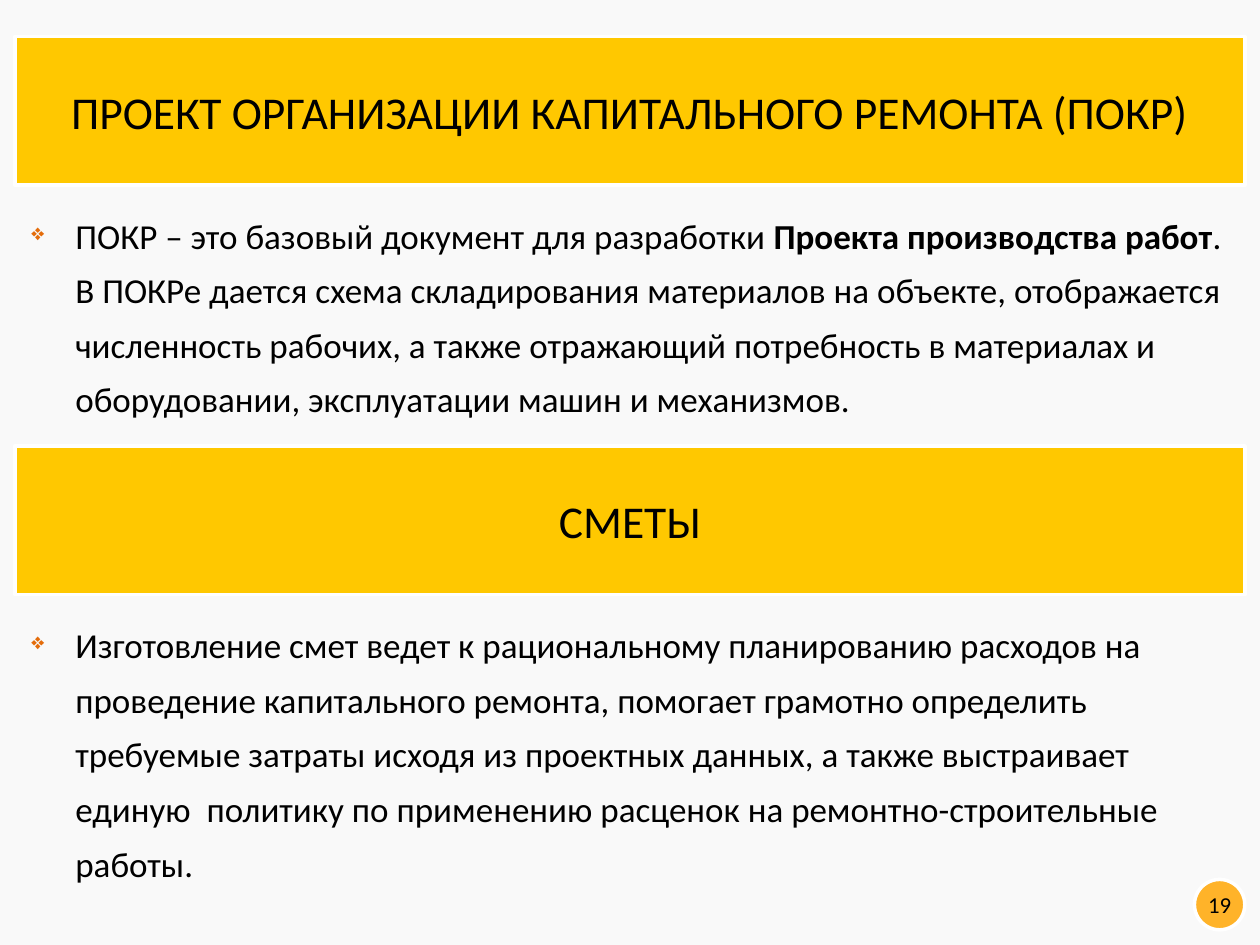
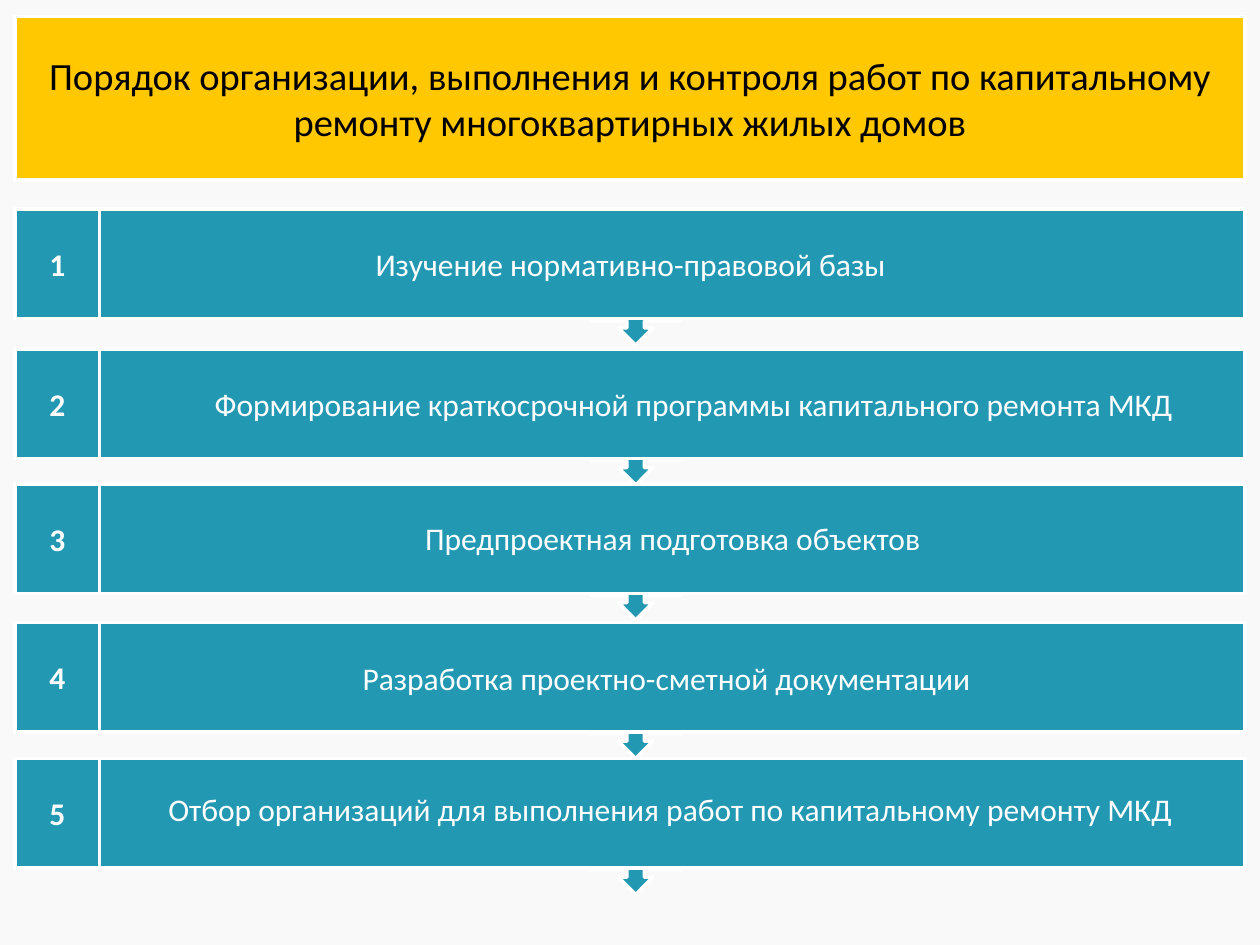
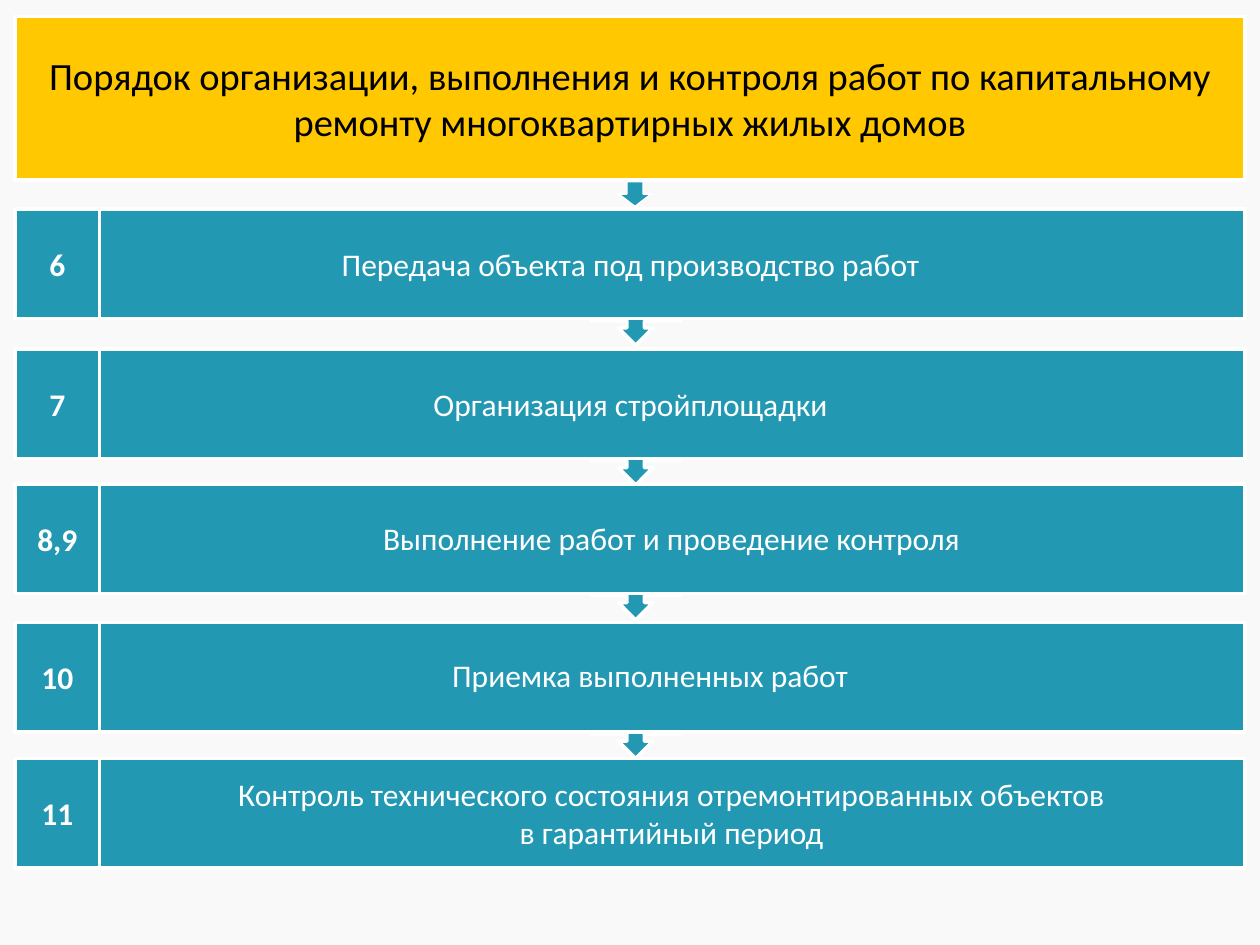
from lxml.etree import SubElement
from pptx import Presentation
from pptx.dml.color import RGBColor
from pptx.enum.shapes import MSO_SHAPE as Shape
from pptx.enum.text import MSO_ANCHOR as Anchor, PP_ALIGN as Align
from pptx.oxml.ns import qn
from pptx.util import Inches, Pt

# Shared look
BACKGROUND = RGBColor(0xF9, 0xF9, 0xF9)
YELLOW = RGBColor(0xFF, 0xC8, 0x00)
AMBER = RGBColor(0xFF, 0xB3, 0x29)
TEAL = RGBColor(0x23, 0x98, 0xB3)
WHITE = RGBColor(0xFF, 0xFF, 0xFF)
BLACK = RGBColor(0x00, 0x00, 0x00)
BULLET_COLOR = "E46C0A"

SECTION_FONT = {"size": Pt(26), "color": BLACK}
TITLE_FONT = {"size": Pt(22), "color": BLACK}
BODY_FONT = {"size": Pt(20), "color": BLACK}
STEP_FONT = {"size": Pt(18), "color": WHITE}
NUMBER_FONT = {**STEP_FONT, "bold": True}
BADGE_FONT = {"size": Pt(13), "color": BLACK}

LEFT, WIDTH = 0.12, 9.76
ROW_TOPS = (1.66, 2.77, 3.84, 4.94, 6.02)
ROW_HEIGHT = 0.87

# Content
SECTIONS = [
    (0.29, "ПРОЕКТ ОРГАНИЗАЦИИ КАПИТАЛЬНОГО РЕМОНТА (ПОКР)", [
        ("ПОКР – это базовый документ для разработки ", False),
        ("Проекта производства работ", True),
        (". В ПОКРе дается схема складирования материалов на объекте, "
         "отображается численность рабочих, а также отражающий потребность "
         "в материалах и оборудовании, эксплуатации машин и механизмов.", False),
    ]),
    (3.54, "СМЕТЫ", [
        ("Изготовление смет ведет к рациональному планированию расходов на "
         "проведение капитального ремонта, помогает грамотно определить "
         "требуемые затраты исходя из проектных данных, а также выстраивает "
         "единую  политику по применению расценок на ремонтно-строительные "
         "работы.", False),
    ]),
]
PROCESS_TITLE = ("Порядок организации, выполнения и контроля работ по "
                 "капитальному ремонту многоквартирных жилых домов")

# Steps: number, lines, then the left indent of a text set inside the bar
# or the (left, top, width, height) of a separate label
FIRST_STEPS = [
    ("1", ["Изучение нормативно-правовой базы"], 0),
    ("2", ["Формирование краткосрочной программы капитального ремонта МКД"], 1),
    ("3", ["Предпроектная подготовка объектов"], (0.89, 4.07, 8.9, 0.4)),
    ("4", ["Разработка проектно-сметной документации"], (0.79, 5.18, 9, 0.4)),
    ("5", ["Отбор организаций для выполнения работ по капитальному ремонту МКД"],
     (0.77, 6.22, 9.1, 0.4)),
]
LAST_STEPS = [
    ("6", ["Передача объекта под производство работ"], 0),
    ("7", ["Организация стройплощадки"], 0),
    ("8,9", ["Выполнение работ и проведение контроля"], (0.78, 4.07, 9.1, 0.4)),
    ("10", ["Приемка выполненных работ"], (0.61, 5.16, 9.1, 0.4)),
    ("11", ["Контроль технического состояния отремонтированных объектов",
            "в гарантийный период"], (0.78, 6.1, 9.1, 0.71)),
]


def add_run(paragraph, text, style):
    run = paragraph.add_run()
    run.text = text
    run.font.name = "Calibri"
    for name, value in style.items():
        if name == "color":
            run.font.color.rgb = value
        else:
            setattr(run.font, name, value)


def write_lines(frame, lines, style):
    """Write one centred paragraph for each line."""
    frame.word_wrap = True
    for index, line in enumerate(lines):
        paragraph = frame.add_paragraph() if index else frame.paragraphs[0]
        paragraph.alignment = Align.CENTER
        add_run(paragraph, line, style)


def add_block(shapes, kind, box, fill, lines=(), style=None, line_width=2):
    shape = shapes.add_shape(kind, *map(Inches, box))
    shape.shadow.inherit = False
    shape.fill.solid()
    shape.fill.fore_color.rgb = fill
    shape.line.color.rgb = WHITE
    shape.line.width = Pt(line_width)
    shape.text_frame.vertical_anchor = Anchor.MIDDLE
    if lines:
        write_lines(shape.text_frame, lines, style)
    return shape


def add_label(slide, box, lines, style):
    label = slide.shapes.add_textbox(*map(Inches, box))
    write_lines(label.text_frame, lines, style)


def add_bullet(paragraph):
    properties = paragraph._p.get_or_add_pPr()
    properties.set("marL", str(Inches(0.38)))
    properties.set("indent", str(Inches(-0.35)))
    color = SubElement(properties, qn("a:buClr"))
    SubElement(color, qn("a:srgbClr")).set("val", BULLET_COLOR)
    SubElement(properties, qn("a:buSzPct")).set("val", "65000")
    SubElement(properties, qn("a:buChar")).set("char", "❖")


def add_section(slide, top, heading, parts):
    """Add a yellow heading band with a bulleted text under it."""
    add_block(slide.shapes, Shape.RECTANGLE, (LEFT, top, WIDTH, 1.18),
              YELLOW, [heading], SECTION_FONT)
    body = slide.shapes.add_textbox(
        *map(Inches, (LEFT, top + 1.26, WIDTH, 3.75)))
    body.text_frame.word_wrap = True
    paragraph = body.text_frame.paragraphs[0]
    for name, value in {"line_spacing": 1.3, "space_before": Pt(8)}.items():
        setattr(paragraph, name, value)
    add_bullet(paragraph)
    for text, bold in parts:
        add_run(paragraph, text, {**BODY_FONT, "bold": bold})


def add_page_badge(slide, number):
    badge = add_block(slide.shapes, Shape.OVAL, (9.48, 6.98, 0.4, 0.4),
                      AMBER, [number], BADGE_FONT)
    for side in ("left", "top", "right", "bottom"):
        setattr(badge.text_frame, f"margin_{side}", 0)


def add_step(slide, top, number, lines, placement, has_arrow):
    """Add a grouped step row: arrow below, bar and number cell."""
    row = slide.shapes.add_group_shape().shapes
    if has_arrow:
        add_block(row, Shape.DOWN_ARROW_CALLOUT,
                  (4.69, top + 0.53, 0.71, 0.55), TEAL)
    bar = add_block(row, Shape.RECTANGLE, (0.13, top, 9.75, ROW_HEIGHT), TEAL)
    add_block(row, Shape.RECTANGLE, (LEFT, top, 0.67, ROW_HEIGHT),
              TEAL, [number], NUMBER_FONT)
    if isinstance(placement, tuple):
        add_label(slide, placement, lines, STEP_FONT)
    else:
        write_lines(bar.text_frame, lines, STEP_FONT)
        bar.text_frame.margin_left = Inches(0.1 + placement)


def add_process(slide, steps, continues):
    """Add the title band and step rows; continues adds the last arrow."""
    add_block(slide.shapes, Shape.RECTANGLE, (LEFT, 0.13, WIDTH, 1.3),
              YELLOW, [PROCESS_TITLE], TITLE_FONT)
    for top, step in zip(ROW_TOPS, steps):
        add_step(slide, top, *step, continues or step is not steps[-1])


def add_slide(presentation):
    slide = presentation.slides.add_slide(presentation.slide_layouts[6])
    slide.background.fill.solid()
    slide.background.fill.fore_color.rgb = BACKGROUND
    return slide


def main():
    presentation = Presentation()
    presentation.slide_width = Inches(10)
    presentation.slide_height = Inches(7.5)

    # Project documents
    slide = add_slide(presentation)
    for section in SECTIONS:
        add_section(slide, *section)
    add_page_badge(slide, "19")

    # Steps 1 to 5
    add_process(add_slide(presentation), FIRST_STEPS, continues=True)

    # Steps 6 to 11
    slide = add_slide(presentation)
    add_process(slide, LAST_STEPS, continues=False)
    add_block(slide.shapes, Shape.DOWN_ARROW, (4.91, 1.44, 0.26, 0.2),
              TEAL, line_width=1)

    presentation.save("out.pptx")


if __name__ == "__main__":
    main()
